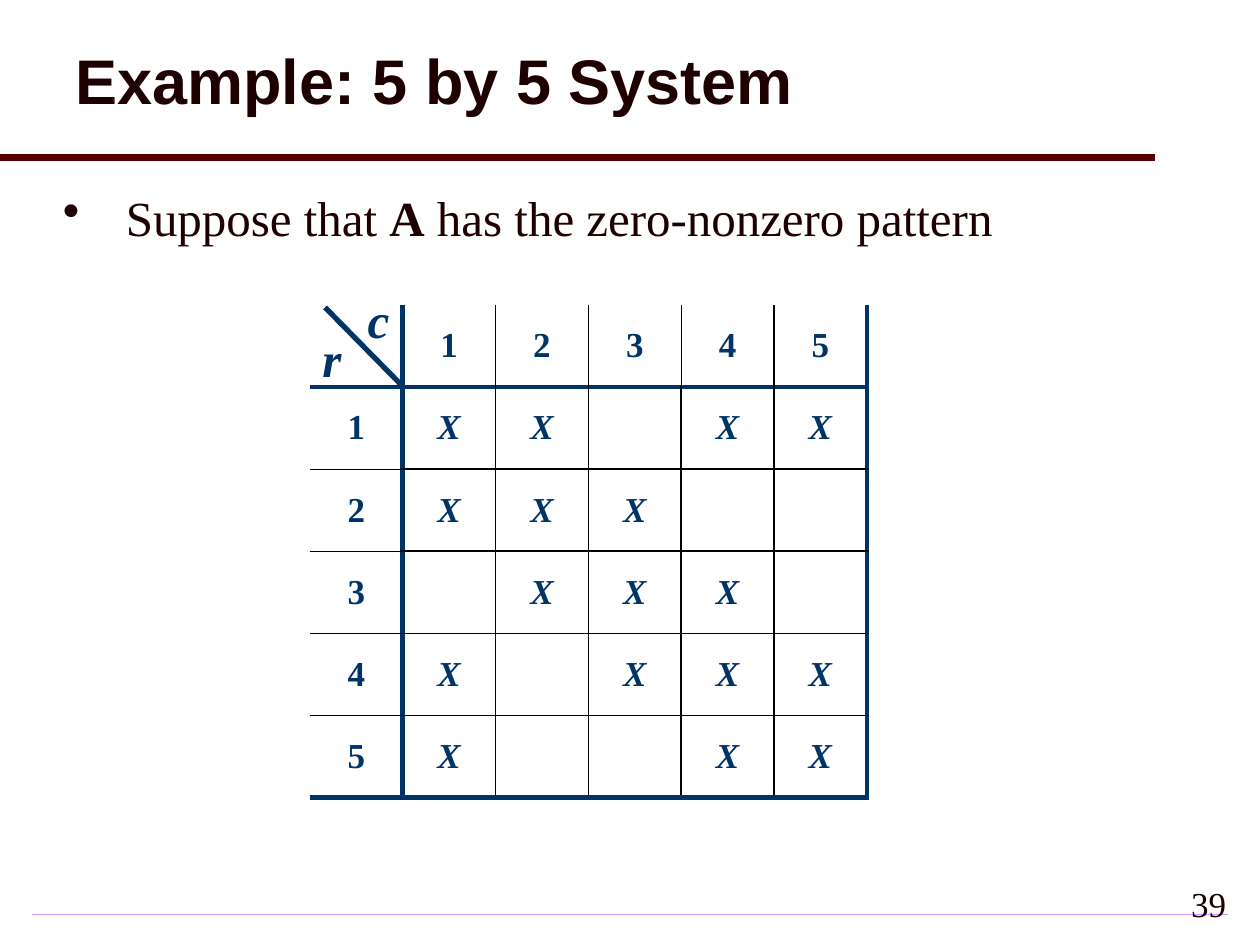
from lxml import etree
from pptx import Presentation
from pptx.dml.color import RGBColor
from pptx.enum.shapes import MSO_CONNECTOR as CONNECTOR, MSO_SHAPE as SHAPE
from pptx.enum.text import MSO_ANCHOR as ANCHOR, PP_ALIGN as ALIGN
from pptx.oxml.ns import qn
from pptx.util import Inches, Pt

COLORS = {"ink": "1E0000", "rule": "500000", "navy": "003366", "grid": "000000",
          "violet": "CC99FF", "lilac": "F3EBFF"}
SERIF, SANS = "Times New Roman", "Arial"
PATTERN = ["XX.XX", "XXX..", ".XXX.", "X.XXX", "X..XX"]
SIZE = len(PATTERN)


def rgb(name):
    return RGBColor.from_string(COLORS[name])


def write(frame, runs, size, color="ink", font=SERIF, align=ALIGN.LEFT,
          anchor=ANCHOR.TOP, bold=False, italic=False, top=0.05, wrap=True,
          line_spacing=None, bullet=None, indent=0.5):
    """Fill a text frame; runs is a string or a list of (text, bold) pairs."""
    frame.word_wrap = wrap
    frame.vertical_anchor = anchor
    frame.margin_top = Inches(top)
    paragraph = frame.paragraphs[0]
    if bullet:
        props = paragraph._p.get_or_add_pPr()
        props.set("marL", str(Inches(indent)))
        props.set("indent", str(-Inches(indent)))
        etree.SubElement(props, qn("a:buChar"), char=bullet)
    paragraph.alignment = align
    if line_spacing:
        paragraph.line_spacing = line_spacing
    for text, is_bold in [(runs, bold)] if isinstance(runs, str) else runs:
        run = paragraph.add_run()
        run.text = text
        run.font.name, run.font.size = font, Pt(size)
        run.font.bold, run.font.italic = is_bold, italic
        run.font.color.rgb = rgb(color)


def add_text(slide, left, top, width, height, runs, size, inset=0.05, **style):
    box = slide.shapes.add_textbox(Inches(left), Inches(top), Inches(width), Inches(height))
    write(box.text_frame, runs, size, top=inset, **style)


def add_line(slide, x1, y1, x2, y2, color, width):
    line = slide.shapes.add_connector(
        CONNECTOR.STRAIGHT, Inches(x1), Inches(y1), Inches(x2), Inches(y2))
    line.line.color.rgb = rgb(color)
    line.line.width = Pt(width)
    etree.SubElement(line._element.spPr, qn("a:effectLst"))


def set_border(cell, side, color=None, width=0.0):
    border = etree.SubElement(cell._tc.get_or_add_tcPr(), qn(f"a:{side}"), w=str(Pt(width)))
    if color is None:
        etree.SubElement(border, qn("a:noFill"))
    else:
        fill = etree.SubElement(border, qn("a:solidFill"))
        etree.SubElement(fill, qn("a:srgbClr"), val=COLORS[color])


def grid_line(index, width):
    """Open outer edge, heavy line after the headings and at the end, thin between."""
    if index == 0:
        return None, 0
    return ("navy", 3) if index in (1, SIZE + 1) else ("grid", width)


def add_header(slide, left, top, width, height):
    add_text(slide, left, top, width, height, "Example: 5 by 5 System", 36, font=SANS,
             bold=True, anchor=ANCHOR.MIDDLE, line_spacing=0.9)
    add_line(slide, 0, top + height, 9.17, top + height, "rule", 4)


def add_footer(slide, left, top, width, height):
    band = slide.shapes.add_shape(
        SHAPE.RECTANGLE, Inches(left), Inches(top), Inches(width), Inches(height))
    band.shadow.inherit = False
    band.line.fill.background()
    band.fill.gradient()
    for stop, color in zip(band.fill.gradient_stops, ("violet", "lilac")):
        stop.color.rgb = rgb(color)
    # Gradient runs from the edges to the centre
    gradient = band._element.spPr.find(qn("a:gradFill"))
    gradient.remove(gradient.find(qn("a:lin")))
    path = etree.SubElement(gradient, qn("a:path"), attrib={"path": "shape"})
    etree.SubElement(path, qn("a:fillToRect"), dict.fromkeys("ltrb", "50000"))
    # Page number
    add_text(slide, left + 7.5, top - 0.33, 2.08, 0.5, "39", 20, align=ALIGN.RIGHT,
             anchor=ANCHOR.MIDDLE)


def add_pattern_table(slide, left, top, width, height):
    count = SIZE + 1
    table = slide.shapes.add_table(
        count, count, Inches(left), Inches(top), Inches(width), Inches(height)).table
    table.first_row = table.horz_banding = False
    for row in range(count):
        for col in range(count):
            cell = table.cell(row, col)
            heading = row == 0 or col == 0
            thin = 0.75 if heading else 1
            for side, index in (("lnL", col), ("lnR", col + 1), ("lnT", row), ("lnB", row + 1)):
                set_border(cell, side, *grid_line(index, thin))
            cell.fill.background()
            cell.vertical_anchor = ANCHOR.MIDDLE
            text = str(row + col) if heading else PATTERN[row - 1][col - 1]
            if text not in ("0", "."):
                write(cell.text_frame, text, 20, color="navy", align=ALIGN.CENTER,
                      bold=True, italic=not heading)
                cell.vertical_anchor = ANCHOR.MIDDLE
    # Corner labels and diagonal
    for label, dx, dy in (("r", 0, 0.1), ("c", 0.36, -0.21)):
        add_text(slide, left + dx, top + dy, 0.21, 0.57, label, 28, inset=0.09,
                 color="navy", bold=True, italic=True)
    add_line(slide, left + 0.75, top + 0.66, left + 0.12, top + 0.02, "navy", 3)


def main():
    deck = Presentation()
    deck.slide_width, deck.slide_height = Inches(10), Inches(7.5)
    slide = deck.slides.add_slide(deck.slide_layouts[6])
    add_footer(slide, 0.25, 7.25, 9.5, 0.01)
    add_header(slide, 0.5, 0.08, 8.75, 1.17)
    # Statement
    add_text(slide, 0.4, 1.4, 8.75, 4.08,
             [("Suppose that ", False), ("A", True), (" has the zero-nonzero pattern", False)],
             28, inset=0.09, bullet="•")
    add_pattern_table(slide, 2.46, 2.42, 4.42, 3.91)
    deck.save("out.pptx")


if __name__ == "__main__":
    main()
